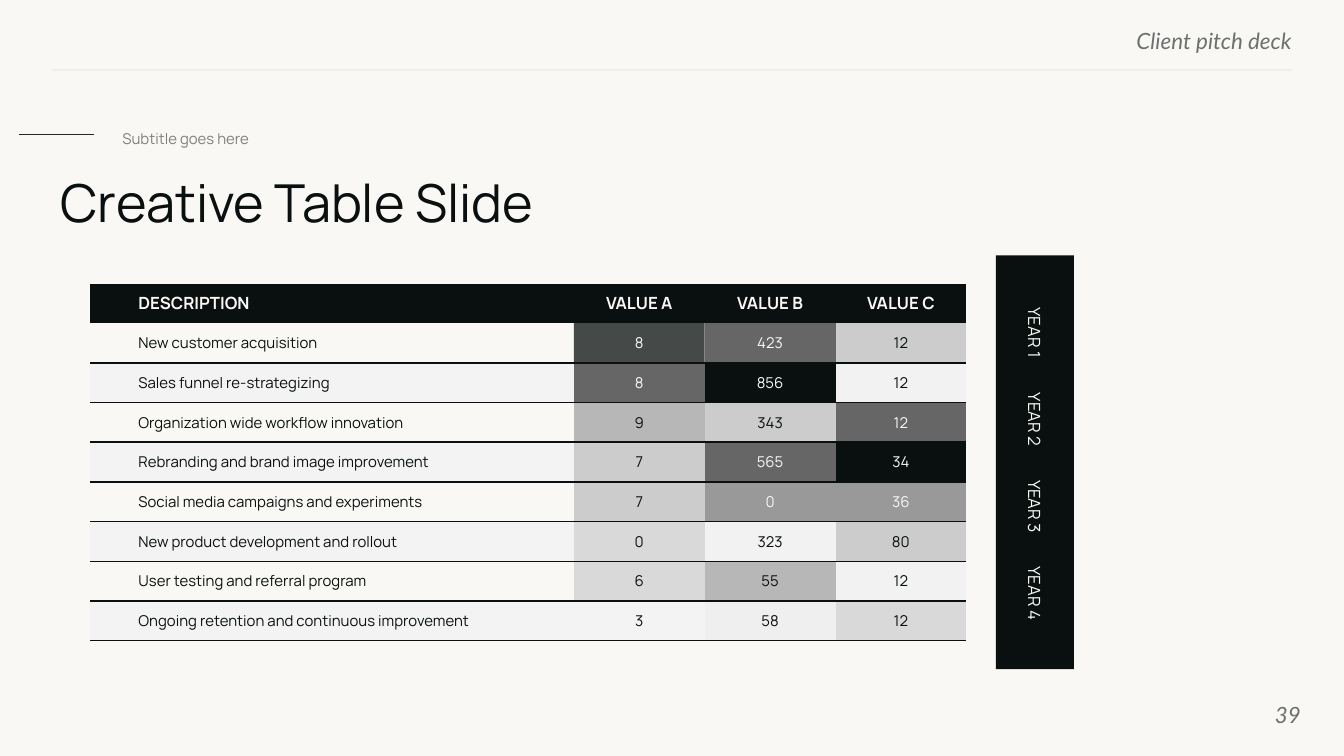
from typing import NamedTuple

from lxml import etree
from pptx import Presentation
from pptx.dml.color import RGBColor
from pptx.enum import shapes, text
from pptx.oxml import ns
from pptx.util import Inches, Pt

INK = RGBColor(0x09, 0x10, 0x0F)
PAPER = RGBColor(0xF9, 0xF8, 0xF5)
STRIPE = RGBColor(0xF3, 0xF3, 0xF3)
MIST = RGBColor(0xF2, 0xF2, 0xF2)
RULE = RGBColor(0xEF, 0xEF, 0xEF)
PALE = RGBColor(0xD9, 0xD9, 0xD9)
LIGHT = RGBColor(0xCC, 0xCC, 0xCC)
SILVER = RGBColor(0xB7, 0xB7, 0xB7)
MEDIUM = RGBColor(0x99, 0x99, 0x99)
DARK = RGBColor(0x66, 0x66, 0x66)
FOOTER = RGBColor(0x6C, 0x70, 0x6F)
SUBTITLE = RGBColor(0x7F, 0x7F, 0x7F)
ACCENT = RGBColor(0x26, 0x26, 0x26)
DARK_FILLS = {INK, DARK, MEDIUM}

LEFT, CENTER, RIGHT = text.PP_ALIGN.LEFT, text.PP_ALIGN.CENTER, text.PP_ALIGN.RIGHT
TOP, MIDDLE = text.MSO_ANCHOR.TOP, text.MSO_ANCHOR.MIDDLE
NO_INSETS = (0, 0, 0, 0)
BOX_INSETS = (0.07, 0.04, 0.07, 0.04)


class Box(NamedTuple):
    left: float
    top: float
    width: float
    height: float

    def lengths(self) -> list:
        return [Inches(value) for value in self]


class Value(NamedTuple):
    label: str
    fill: RGBColor
    opacity: int = 100


class Row(NamedTuple):
    description: str
    values: tuple


HEADINGS = ("DESCRIPTION", "VALUE A", "VALUE B", "VALUE C")
ROWS = (
    Row("New customer acquisition", (Value("8", INK, 75), Value("423", DARK), Value("12", LIGHT))),
    Row("Sales funnel re-strategizing", (Value("8", DARK), Value("856", INK), Value("12", MIST))),
    Row("Organization wide workflow innovation", (Value("9", SILVER), Value("343", LIGHT), Value("12", DARK))),
    Row("Rebranding and brand image improvement", (Value("7", LIGHT), Value("565", DARK), Value("34", INK))),
    Row("Social media campaigns and experiments", (Value("7", LIGHT), Value("0", MEDIUM), Value("36", MEDIUM))),
    Row("New product development and rollout", (Value("0", PALE), Value("323", MIST), Value("80", LIGHT))),
    Row("User testing and referral program", (Value("6", PALE), Value("55", SILVER), Value("12", MIST))),
    Row("Ongoing retention and continuous improvement", (Value("3", STRIPE), Value("58", RULE), Value("12", PALE))),
)


def write(frame, content: str, *, size: float, color: RGBColor, font: str = "Manrope",
          bold: bool = False, italic: bool = False, align=LEFT):
    paragraph = frame.paragraphs[0]
    paragraph.alignment = align
    run = paragraph.add_run()
    run.text = content
    run.font.name = font
    run.font.size = Pt(size)
    run.font.bold = bold
    run.font.italic = italic
    run.font.color.rgb = color
    return paragraph


def set_frame(frame, insets: tuple, anchor=TOP) -> None:
    frame.margin_left, frame.margin_top, frame.margin_right, frame.margin_bottom = map(Inches, insets)
    frame.vertical_anchor = anchor
    frame.word_wrap = True
    frame.auto_size = text.MSO_AUTO_SIZE.NONE


def add_text(parent, box: Box, content: str, *, insets: tuple = NO_INSETS, anchor=TOP, **style):
    frame = parent.add_textbox(*box.lengths()).text_frame
    set_frame(frame, insets, anchor)
    return write(frame, content, **style)


def add_rule(parent, start: float, end: float, y: float, color: RGBColor) -> None:
    line = parent.add_connector(shapes.MSO_CONNECTOR.STRAIGHT, Inches(start), Inches(y), Inches(end), Inches(y))
    line.line.color.rgb = color
    line.line.width = Pt(0.75)
    etree.SubElement(line._element.spPr, ns.qn("a:effectLst"))


def add_rectangle(parent, box: Box, fill: RGBColor):
    rectangle = parent.add_shape(shapes.MSO_SHAPE.RECTANGLE, *box.lengths())
    rectangle.shadow.inherit = False
    rectangle.fill.solid()
    rectangle.fill.fore_color.rgb = fill
    rectangle.line.fill.background()
    return rectangle


def set_borders(cell, ruled: str) -> None:
    properties = cell._tc.get_or_add_tcPr()
    for side in "LRTB":
        border = etree.SubElement(properties, ns.qn(f"a:ln{side}"), w=str(Pt(1)))
        if side in ruled:
            fill = etree.SubElement(border, ns.qn("a:solidFill"))
            etree.SubElement(fill, ns.qn("a:srgbClr"), val=str(INK))
        else:
            etree.SubElement(border, ns.qn("a:noFill"))


def fill_cell(cell, value: Value, column: int, ruled: str, size: float, bold: bool = False) -> None:
    set_borders(cell, ruled)
    cell.fill.solid()
    cell.fill.fore_color.rgb = value.fill
    if value.opacity < 100:
        color = cell._tc.tcPr.find(ns.qn("a:solidFill"))[0]
        etree.SubElement(color, ns.qn("a:alpha"), val=str(value.opacity * 1000))
    cell.vertical_anchor = MIDDLE
    cell.margin_left = Inches(0.08 if column else 0.3)
    cell.margin_right = Inches(0.08)
    cell.margin_top = cell.margin_bottom = Inches(0.04)
    paragraph = write(cell.text_frame, value.label, size=size, bold=bold,
                      color=PAPER if value.fill in DARK_FILLS else INK,
                      align=CENTER if column else LEFT)
    if column == 0:
        paragraph._p.get_or_add_pPr().set("marL", str(Inches(0.06)))


def add_value_table(parent, box: Box, description_width: float) -> None:
    table = parent.add_table(len(ROWS) + 1, len(HEADINGS), *box.lengths()).table
    value_width = (box.width - description_width) / (len(HEADINGS) - 1)
    for index, column in enumerate(table.columns):
        column.width = Inches(value_width if index else description_width)
    for row in table.rows:
        row.height = Inches(box.height / (len(ROWS) + 1))
    for column, heading in enumerate(HEADINGS):
        fill_cell(table.cell(0, column), Value(heading, INK), column, "", 9, True)
    for index, row in enumerate(ROWS, 1):
        description = Value(row.description, PAPER if index % 2 else STRIPE)
        ruled = "B" if index == 1 else "TB"
        for column, value in enumerate((description, *row.values)):
            fill_cell(table.cell(index, column), value, column, ruled, 8)


def add_year_panel(parent) -> None:
    panel = parent.add_group_shape().shapes
    add_rectangle(panel, Box(7.41, 1.9, 0.58, 3.08), INK)
    pitch = (4.3 - 2.36) / 3
    for index in range(4):
        tab = add_rectangle(panel, Box(7.34, 2.36 + index * pitch, 0.72, 0.23), INK)
        tab.rotation = 90
        set_frame(tab.text_frame, BOX_INSETS)
        write(tab.text_frame, f"YEAR {index + 1}", size=9, color=PAPER, align=CENTER)


def main() -> None:
    presentation = Presentation()
    presentation.slide_width = Inches(10)
    presentation.slide_height = presentation.slide_width * 9 // 16
    slide = presentation.slides.add_slide(presentation.slide_layouts[5])
    slide.background.fill.solid()
    slide.background.fill.fore_color.rgb = PAPER

    footer_style = dict(size=12, color=FOOTER, font="Lato", italic=True, align=RIGHT)
    add_text(slide.shapes, Box(5.76, 0.2, 3.85, 0.18), "Client pitch deck", **footer_style)
    add_rule(slide.shapes, 9.61, 0.39, 0.52, RULE)

    heading = slide.shapes.add_group_shape().shapes
    subtitle = add_text(heading, Box(0.84, 0.86, 3.31, 0.21), "Subtitle goes here",
                        insets=BOX_INSETS, size=8, color=SUBTITLE)
    subtitle.line_spacing = 1.5
    add_rule(heading, 0.14, 0.7, 1, ACCENT)

    title = slide.shapes.title
    title.left, title.top, title.width, title.height = Box(0.45, 1.27, 9.23, 0.51).lengths()
    set_frame(title.text_frame, NO_INSETS)
    write(title.text_frame, "Creative Table Slide", size=28, color=INK).space_after = Pt(10)

    add_text(slide.shapes, Box(9.08, 5.1, 0.6, 0.43), "39", anchor=MIDDLE, **footer_style)
    add_value_table(slide.shapes, Box(0.67, 2.11, 6.52, 2.66), 3.6)
    add_year_panel(slide.shapes)
    presentation.save("out.pptx")


if __name__ == "__main__":
    main()
